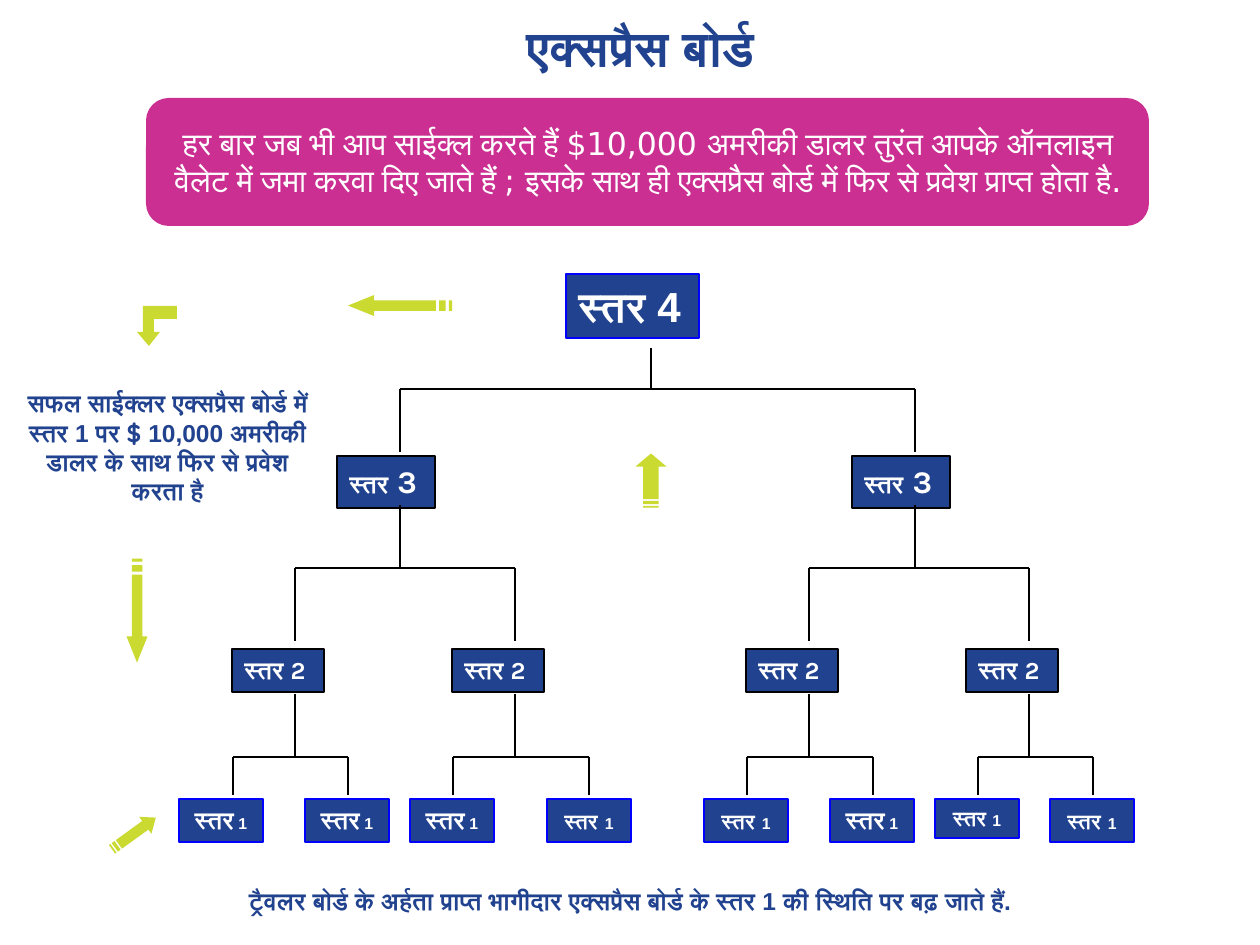
from pptx import Presentation, util as u
from pptx.dml.color import RGBColor
from pptx.enum import shapes as sh, text as tx
from pptx.oxml.ns import qn
from lxml import etree

NAVY = RGBColor(0x21, 0x42, 0x8E)
PINK = RGBColor(0xCB, 0x2F, 0x92)
LIME = RGBColor(0xCA, 0xDA, 0x30)
BLUE = RGBColor(0x00, 0x00, 0xFF)
BLACK = RGBColor(0x00, 0x00, 0x00)
WHITE = RGBColor(0xFF, 0xFF, 0xFF)
PX = 914400 / 126
MID, LEFT = tx.PP_ALIGN.CENTER, tx.PP_ALIGN.LEFT


def px(*vals):
    return [round(v * PX) for v in vals]


def write(shape, runs, color, align=MID, bold=True, anchor=tx.MSO_ANCHOR.TOP):
    """Fill a shape with one paragraph of (text, size, font) runs."""
    frame = shape.text_frame
    frame.word_wrap = True
    frame.auto_size = tx.MSO_AUTO_SIZE.NONE
    frame.vertical_anchor = anchor
    para = frame.paragraphs[0]
    para.alignment = align
    for words, size, face in runs:
        run = para.add_run()
        run.text = words
        font = run.font
        font.size, font.name, font.bold = u.Pt(size), face, bold
        font.color.rgb = color


deck = Presentation()
deck.slide_width, deck.slide_height = px(1260, 945)
slide = deck.slides.add_slide(deck.slide_layouts[5])
items = slide.shapes

# Title
title = items.title
title.left, title.top, title.width, title.height = px(10, 11, 1260, 72)
write(title, [("एक्सप्रैस बोर्ड", 28, "DejaVu Sans")], NAVY)

# Banner
banner = items.add_shape(sh.MSO_SHAPE.FLOWCHART_ALTERNATE_PROCESS,
                         *px(148, 100, 999, 124))
banner.shadow.inherit = False
banner.fill.solid()
banner.fill.fore_color.rgb = PINK
banner.line.color.rgb = PINK
banner.line.width = u.Pt(2.25)
write(items.add_textbox(*px(147, 98, 1002, 127)),
      [("हर बार जब भी आप साईक्ल करते हैं $10,000 अमरीकी डालर तुरंत आपके ऑनलाइन "
        "वैलेट में जमा करवा दिए जाते हैं ; इसके साथ ही एक्सप्रैस बोर्ड में फिर से "
        "प्रवेश प्राप्त होता है.", 18, "DejaVu Sans")],
      WHITE, bold=False, anchor=tx.MSO_ANCHOR.MIDDLE)

# Side note and footer
write(items.add_textbox(*px(10, 382, 315, 130)),
      [("सफल साईक्लर एक्सप्रैस बोर्ड में स्तर 1 पर ", 14, "Arial"),
       ("$ ", 14, "Quicksand"),
       ("10,000 अमरीकी डालर के साथ फिर से प्रवेश करता है", 14, "Arial")], NAVY)
write(items.add_textbox(*px(0, 880, 1260, 42)),
      [("ट्रैवलर बोर्ड के अर्हता प्राप्त भागीदार एक्सप्रैस बोर्ड के स्तर 1 "
        "की स्थिति पर बढ़ जाते हैं.", 14, "Arial")], NAVY)

# Level boxes: left, top, width, height, edge, alignment, runs
WORD = "स्तर"
two = [(WORD, 14, "Quicksand"), (" 2", 14, "Karla")]
three = [(WORD, 14, "Quicksand"), (" 3", 18, "Karla")]
large = [(WORD, 14, "Quicksand"), (" 1", 9, "Arial")]
small = [(WORD, 12, "Quicksand"), (" ", 14, "Quicksand"), ("1", 9, "Arial")]
short = [(WORD + " ", 12, "Quicksand"), ("1", 9, "Arial")]

mids2 = [295, 515, 809, 1029]
mids3 = [400, 915]
ends = [233, 348, 453, 589, 747, 873, 978, 1093]
lefts = [179, 305, 410, 547, 704, 830, 935, 1050]
labels = [large, large, large, small, small, large, short, small]

boxes = [(566, 274, 133, 64, BLUE, LEFT, [(WORD + " 4", 24, "Arial")])]
boxes += [(x - 63, 456, 98, 52, BLACK, LEFT, three) for x in mids3]
boxes += [(x - 63, 649, 92, 43, BLACK, LEFT, two) for x in mids2]
boxes += [(x, 799, 84, 39 if runs is short else 43, BLUE, MID, runs)
          for x, runs in zip(lefts, labels)]
for *place, edge, align, runs in boxes:
    box = items.add_shape(sh.MSO_SHAPE.RECTANGLE, *px(*place))
    box.shadow.inherit = False
    box.fill.solid()
    box.fill.fore_color.rgb = NAVY
    box.line.color.rgb = edge
    box.line.width = u.Pt(0.75)
    write(box, runs, WHITE, align)

# Tree lines: each fork has a stem, a bar and two drops
forks = [(651, 348, 389, 452, mids3)]
forks += [(x, 505, 568, 641, mids2[2 * i:2 * i + 2])
          for i, x in enumerate(mids3)]
forks += [(x, 694, 757, 795, ends[2 * i:2 * i + 2])
          for i, x in enumerate(mids2)]
for stem, top, bar, low, (a, b) in forks:
    for ends4 in [(stem, top, stem, bar), (a, bar, b, bar),
                  (a, bar, a, low), (b, bar, b, low)]:
        line = items.add_connector(sh.MSO_CONNECTOR.STRAIGHT, *px(*ends4))
        line.line.color.rgb = BLACK
        line.line.width = u.Pt(0.75)
        etree.SubElement(line._element.spPr, qn("a:effectLst"))

# Arrows: striped ones point right before they are turned
arrows = []
for x, y, w, h, head, turn in [(348, 295, 104, 21, 26, 180),
                               (624, 465, 54, 31, 13, 270),
                               (85, 600, 104, 21, 26, 90),
                               (107, 823, 54, 21, 13, 324.1)]:
    up, down, neck = y + h / 4, y + 3 * h / 4, x + w - head
    stripes = [[(x + a * w / 32, up), (x + b * w / 32, up),
                (x + b * w / 32, down), (x + a * w / 32, down)]
               for a, b in [(0, 1), (2, 4)]]
    start = x + 5 * w / 32
    body = [(start, up), (neck, up), (neck, y), (x + w, y + h / 2),
            (neck, y + h), (neck, down), (start, down)]
    arrows.append((stripes + [body], turn))
bent = [(149, 346), (160, 332), (154, 332), (154, 319), (177, 319),
        (177, 306), (143, 306), (143, 332), (137, 332)]
arrows.append(([bent], 0))

for parts, turn in arrows:
    pen = items.build_freeform(*px(*parts[0][0]))
    for part in parts:
        pen.move_to(*px(*part[0]))
        pen.add_line_segments([px(*spot) for spot in part[1:]], close=True)
    arrow = pen.convert_to_shape()
    arrow.rotation = turn
    arrow.shadow.inherit = False
    arrow.fill.solid()
    arrow.fill.fore_color.rgb = LIME
    arrow.line.fill.background()

deck.save("out.pptx")
